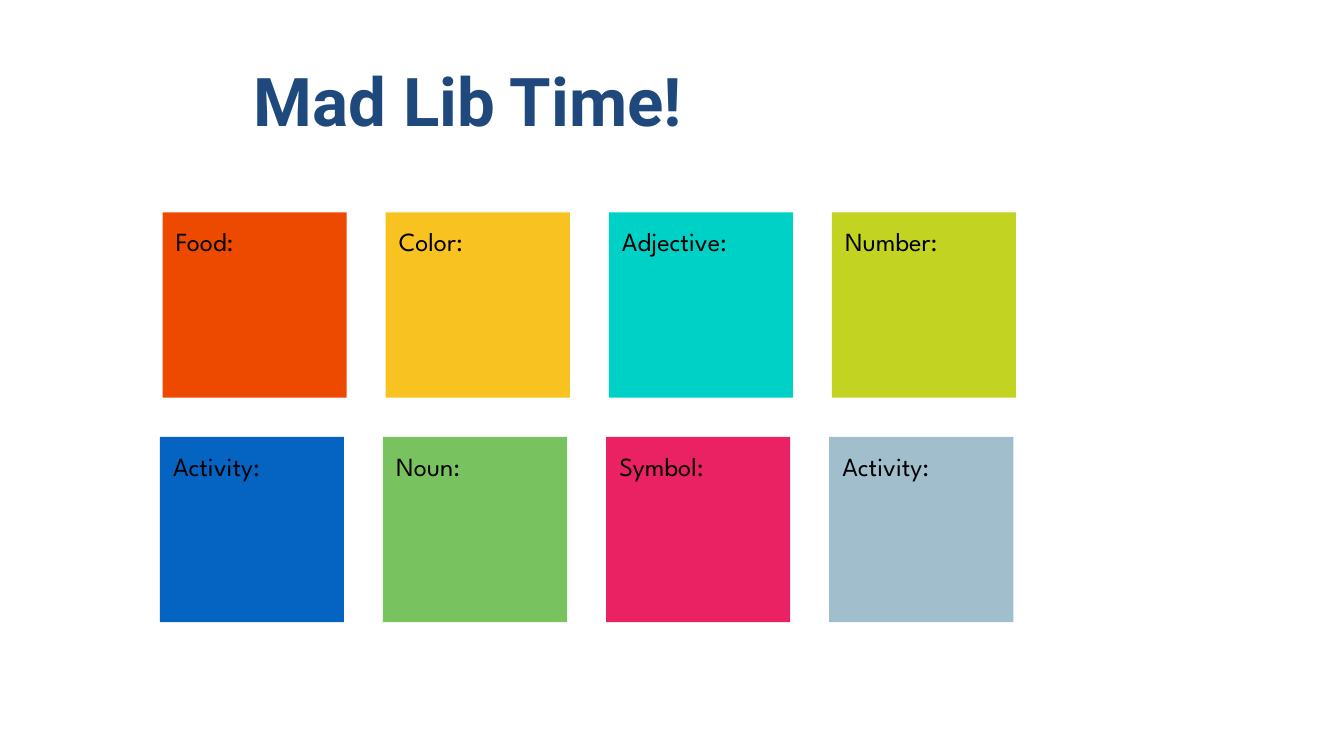
from pptx import Presentation, util as u
from pptx.dml.color import RGBColor
from pptx.enum import shapes, text
from pptx.oxml import ns, xmlchemy

NAVY = RGBColor(0x1F, 0x49, 0x7D)
BLACK = RGBColor(0x00, 0x00, 0x00)
ORANGE = RGBColor(0xED, 0x4A, 0x00)
YELLOW = RGBColor(0xF8, 0xBB, 0x00)
TEAL = RGBColor(0x00, 0xD1, 0xC6)
LIME = RGBColor(0xBB, 0xCD, 0x00)
BLUE = RGBColor(0x05, 0x63, 0xC1)
GREEN = RGBColor(0x65, 0xBB, 0x48)
PINK = RGBColor(0xE8, 0x00, 0x4C)
GREY = RGBColor(0xA1, 0xBE, 0xCC)

SLIDE_WIDTH = u.Inches(10)
SLIDE_HEIGHT = SLIDE_WIDTH * 9 // 16
CARD_WIDTH, CARD_HEIGHT = 1.37, 1.38
COLUMN_STEP = 1.66
SOLID, SHEER = 100, 87

PROMPT_ROWS = [
    ((1.21, 1.58), [("Food:", ORANGE, SOLID), ("Color:", YELLOW, SHEER),
                    ("Adjective:", TEAL, SOLID), ("Number:", LIME, SHEER)]),
    ((1.19, 3.25), [("Activity:", BLUE, SOLID), ("Noun:", GREEN, SHEER),
                    ("Symbol:", PINK, SHEER), ("Activity:", GREY, SOLID)]),
]


def write(holder, words, *, font, size, color, bold=False):
    frame = holder.text_frame
    frame.word_wrap = True
    frame.vertical_anchor = text.MSO_ANCHOR.TOP
    frame.margin_left = frame.margin_right = u.Inches(0.1)
    frame.margin_top = frame.margin_bottom = u.Inches(0.1)
    paragraph = frame.paragraphs[0]
    paragraph.alignment = text.PP_ALIGN.LEFT
    run = paragraph.add_run()
    run.text = words
    run.font.name = font
    run.font.size = u.Pt(size)
    run.font.bold = bold
    run.font.color.rgb = color


def set_opacity(card, percent):
    color = card.element.spPr.find(".//" + ns.qn("a:srgbClr"))
    alpha = xmlchemy.OxmlElement("a:alpha")
    alpha.set("val", str(percent * 1000))
    color.append(alpha)


def add_heading(slide, box):
    heading = slide.shapes.add_textbox(*map(u.Inches, box))
    write(heading, "Mad Lib Time!", font="Roboto", size=36, color=NAVY, bold=True)


def add_prompt_card(slide, box, prompt, color, opacity):
    card = slide.shapes.add_shape(shapes.MSO_SHAPE.RECTANGLE, *map(u.Inches, box))
    card.shadow.inherit = False
    card.fill.solid()
    card.fill.fore_color.rgb = color
    if opacity < SOLID:
        set_opacity(card, opacity)
    card.line.fill.background()
    write(card, prompt, font="League Spartan", size=14, color=BLACK)


def add_prompt_row(slide, origin, prompts):
    left, top = origin
    for column, (prompt, color, opacity) in enumerate(prompts):
        box = (left + column * COLUMN_STEP, top, CARD_WIDTH, CARD_HEIGHT)
        add_prompt_card(slide, box, prompt, color, opacity)


def main():
    deck = Presentation()
    deck.slide_width = SLIDE_WIDTH
    deck.slide_height = SLIDE_HEIGHT
    slide = deck.slides.add_slide(deck.slide_layouts[6])
    add_heading(slide, (1.79, 0.34, 5.09, 0.94))
    for origin, prompts in PROMPT_ROWS:
        add_prompt_row(slide, origin, prompts)
    deck.save("out.pptx")


if __name__ == "__main__":
    main()
